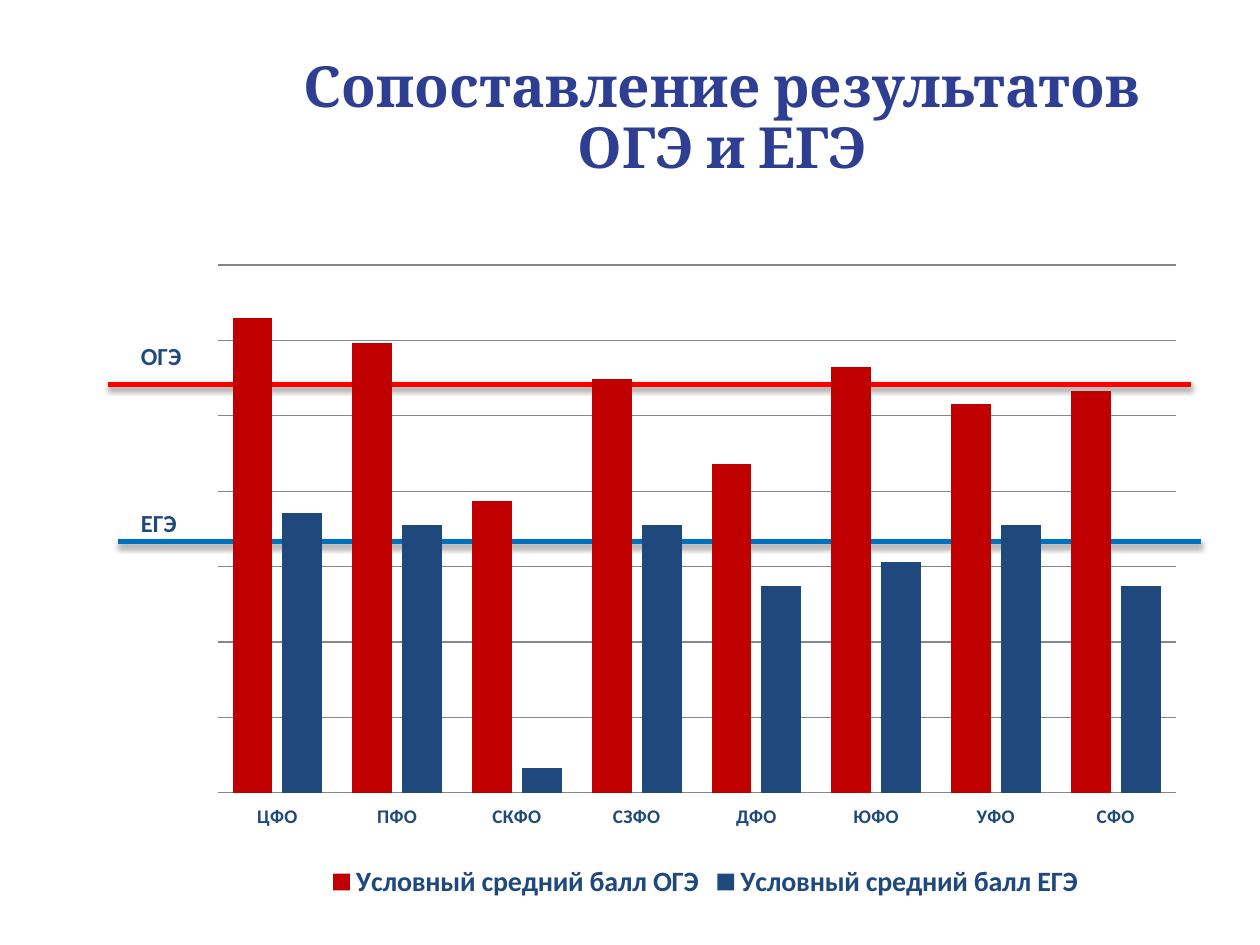
from dataclasses import dataclass

from lxml.etree import SubElement
from pptx import Presentation
from pptx.chart.data import CategoryChartData
from pptx.dml.color import RGBColor
from pptx.enum.chart import XL_CHART_TYPE, XL_LEGEND_POSITION, XL_TICK_LABEL_POSITION, XL_TICK_MARK
from pptx.enum.shapes import MSO_CONNECTOR
from pptx.enum.text import MSO_ANCHOR, PP_ALIGN
from pptx.oxml import parse_xml
from pptx.oxml.ns import nsdecls, qn
from pptx.util import Inches, Pt


@dataclass(frozen=True)
class Theme:
    title: RGBColor = RGBColor(0x2D, 0x3E, 0x93)
    navy: RGBColor = RGBColor(0x1F, 0x49, 0x7D)
    crimson: RGBColor = RGBColor(0xC0, 0x00, 0x00)
    red: RGBColor = RGBColor(0xFF, 0x00, 0x00)
    blue: RGBColor = RGBColor(0x00, 0x70, 0xC0)
    grid: RGBColor = RGBColor(0x86, 0x86, 0x86)
    heading_font: str = "Cambria"
    body_font: str = "Calibri"
    title_size: float = 32.4
    legend_size: int = 16
    label_size: int = 14
    axis_size: int = 11


THEME = Theme()

DISTRICTS = ["ЦФО", "ПФО", "СКФО", "СЗФО", "ДФО", "ЮФО", "УФО", "СФО"]
SCORES = {
    "Условный средний балл ОГЭ": ([100, 98, 85, 95, 88, 96, 93, 94], THEME.crimson),
    "Условный средний балл ЕГЭ": ([84, 83, 63, 83, 78, 80, 83, 78], THEME.navy),
}
# Label, line colour, label top, line left, line height on the slide
AVERAGES = [
    ("ЕГЭ", THEME.blue, 3.98, 0.94, 4.3),
    ("ОГЭ", THEME.red, 2.66, 0.86, 3.05),
]


def apply(target, **values):
    for attribute, value in values.items():
        setattr(target, attribute, value)


def style_font(font, size, color, name=THEME.body_font):
    apply(font, size=Pt(size), bold=True, name=name)
    font.color.rgb = color


def add_text(slide, box, text, size, color, name=THEME.body_font, wrap=False):
    frame = slide.shapes.add_textbox(*map(Inches, box)).text_frame
    frame.word_wrap = wrap
    paragraph = frame.paragraphs[0]
    run = paragraph.add_run()
    run.text = text
    style_font(run.font, size, color, name)
    return frame, paragraph


def add_title(slide, box):
    frame, paragraph = add_text(slide, box, "Сопоставление результатов ОГЭ и ЕГЭ",
                                THEME.title_size, THEME.title, THEME.heading_font, wrap=True)
    frame.vertical_anchor = MSO_ANCHOR.MIDDLE
    apply(paragraph, alignment=PP_ALIGN.CENTER, line_spacing=0.9)


def add_average_line(slide, left, top, width, color):
    line = slide.shapes.add_connector(
        MSO_CONNECTOR.STRAIGHT, *map(Inches, (left, top, left + width, top)))
    line.line.width = Pt(3)
    line.line.color.rgb = color
    # Soft shadow below the line
    line.element.spPr.append(parse_xml(
        f'<a:effectLst {nsdecls("a")}>'
        '<a:outerShdw blurRad="40000" dist="23000" dir="5400000" rotWithShape="0">'
        '<a:srgbClr val="000000"><a:alpha val="35000"/></a:srgbClr>'
        '</a:outerShdw></a:effectLst>'))


def set_plot_layout(chart, **fractions):
    plot_area = chart.element.find(".//" + qn("c:plotArea"))
    for layout in plot_area.findall(qn("c:layout")):
        plot_area.remove(layout)
    layout = parse_xml(f'<c:layout {nsdecls("c")}/>')
    plot_area.insert(0, layout)
    manual = SubElement(layout, qn("c:manualLayout"))
    settings = {"layoutTarget": "inner", "xMode": "edge", "yMode": "edge", **fractions}
    for tag, value in settings.items():
        SubElement(manual, qn(f"c:{tag}")).set("val", str(value))


def add_score_chart(slide, box):
    data = CategoryChartData()
    data.categories = DISTRICTS
    for name, (values, _) in SCORES.items():
        data.add_series(name, values)
    chart = slide.shapes.add_chart(
        XL_CHART_TYPE.COLUMN_CLUSTERED, *map(Inches, box), data).chart
    chart.has_title = False
    apply(chart.font, name=THEME.body_font, size=Pt(10))
    set_plot_layout(chart, x=0.011, y=0.044, w=0.96, h=0.789)

    # Columns
    plot = chart.plots[0]
    apply(plot, gap_width=75, overlap=-25, vary_by_categories=False)
    for series, (_, color) in zip(plot.series, SCORES.values()):
        series.invert_if_negative = False
        series.format.fill.solid()
        series.format.fill.fore_color.rgb = color

    # Axes: seven equal steps above the minimum
    districts, scores = chart.category_axis, chart.value_axis
    apply(districts, major_tick_mark=XL_TICK_MARK.NONE, minor_tick_mark=XL_TICK_MARK.NONE,
          tick_label_position=XL_TICK_LABEL_POSITION.LOW)
    style_font(districts.tick_labels.font, THEME.axis_size, THEME.navy)
    step = 6.2
    apply(scores, visible=False, minimum_scale=61, maximum_scale=61 + 7 * step,
          major_unit=step, has_major_gridlines=True)
    for line in (districts.format.line, scores.major_gridlines.format.line):
        line.width = Pt(0.75)
        line.color.rgb = THEME.grid

    # Legend
    chart.has_legend = True
    apply(chart.legend, position=XL_LEGEND_POSITION.BOTTOM, include_in_layout=False)
    style_font(chart.legend.font, THEME.legend_size, THEME.navy)


def build():
    deck = Presentation()
    apply(deck, slide_width=Inches(10), slide_height=Inches(7.5))
    slide = deck.slides.add_slide(deck.slide_layouts[6])
    # The average lines lie behind the columns
    for _, color, _, left, height in AVERAGES:
        add_average_line(slide, left, height, 8.59, color)
    add_title(slide, (2.03, 0.47, 7.41, 0.96))
    add_score_chart(slide, (1.64, 1.87, 7.92, 5.31))
    for label, _, top, _, _ in AVERAGES:
        add_text(slide, (1.02, top, 0.6, 0.88), label, THEME.label_size, THEME.navy)
    deck.save("out.pptx")


if __name__ == "__main__":
    build()
